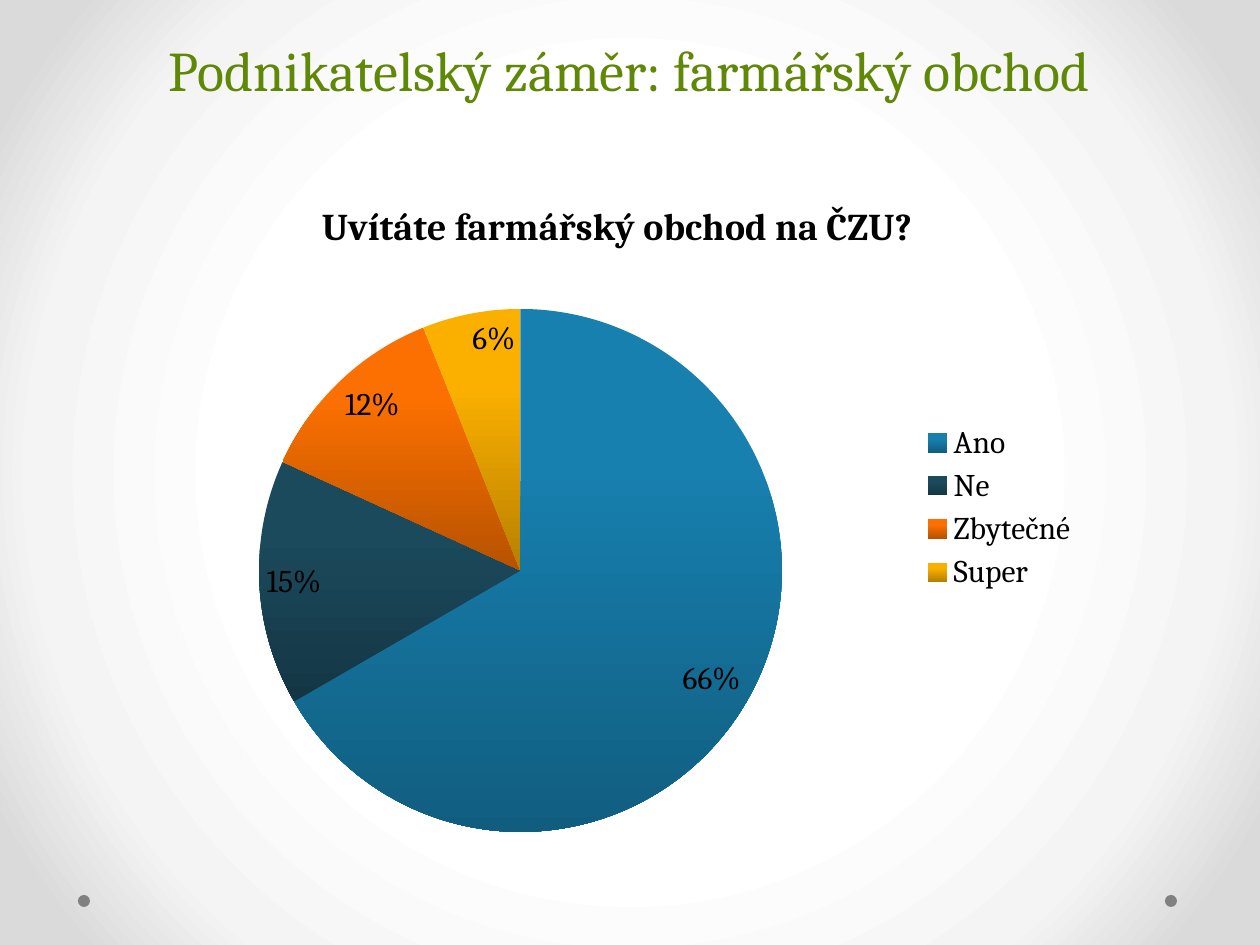
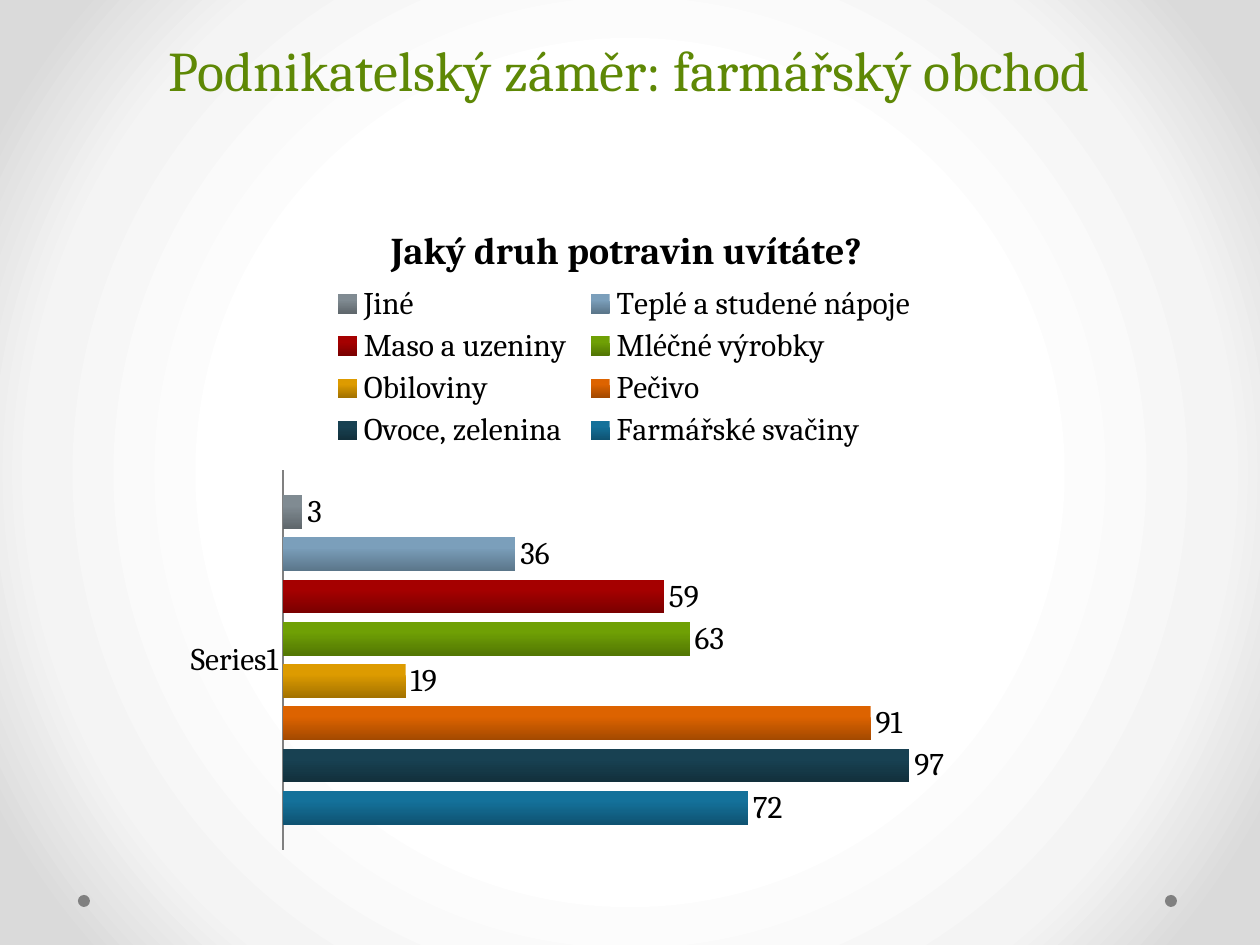
from dataclasses import dataclass

from lxml import etree
from pptx import Presentation
from pptx.chart.data import CategoryChartData as Data
from pptx.dml.color import RGBColor as Rgb
from pptx.enum.chart import XL_CHART_TYPE as Kind
from pptx.enum.chart import XL_LABEL_POSITION as Spot
from pptx.enum.chart import XL_LEGEND_POSITION as Side
from pptx.enum.chart import XL_TICK_MARK as Tick
from pptx.enum.shapes import MSO_SHAPE as Form
from pptx.enum.text import MSO_ANCHOR as Anchor
from pptx.enum.text import MSO_AUTO_SIZE as Fit
from pptx.enum.text import PP_ALIGN as Align
from pptx.oxml.ns import qn
from pptx.util import Pt


@dataclass(frozen=True)
class Theme:
    font: str = "Cambria"
    green: str = "5E8805"
    ink: str = "000000"
    gray: str = "808080"
    glow: tuple = ((50, "FFFFFF"), (76, "F4F4F4"), (92, "DADADA"))
    hues: tuple = ("1780AF", "1B4A5D", "FB7000", "FBB000",
                   "7EB606", "BC0000", "8CB5D5", "929EA6")
    head: float = 32
    lead: float = 58
    sub: float = 21.6
    base: float = 18


HEAD = "Podnikatelský záměr: farmářský obchod"
VIEWS = {"Ano": 66, "Ne": 15, "Zbytečné": 12, "Super": 6}
FOODS = {
    "Farmářské svačiny": 72,
    "Ovoce, zelenina": 97,
    "Pečivo": 91,
    "Obiloviny": 19,
    "Mléčné výrobky": 63,
    "Maso a uzeniny": 59,
    "Teplé a studené nápoje": 36,
    "Jiné": 3,
}


def px(n):
    return round(n * 914400 / 126)


def shade(hue, part):
    return Rgb(*(round(c * part) for c in Rgb.from_string(hue)))


def put(frame, text, size, color, bold=False, align=Align.CENTER, lead=None):
    para = frame.paragraphs[0]
    para.alignment = align
    if lead:
        para.line_spacing = Pt(lead)
    run = para.add_run()
    run.text = text
    font = run.font
    font.name, font.size, font.bold = Theme.font, Pt(size), bold
    font.color.rgb = Rgb.from_string(color)


def place(node, index, area, box):
    for old in node.findall(qn("c:layout")):
        node.remove(old)
    lay = etree.Element(qn("c:layout"))
    man = etree.SubElement(lay, qn("c:manualLayout"))
    parts = {"xMode": "edge", "yMode": "edge"}
    if node.tag == qn("c:plotArea"):
        parts = {"layoutTarget": "inner", **parts}
    left, top, wide, high = area
    fracs = ((box[0] - left) / wide, (box[1] - top) / high,
             *(a / b for a, b in zip(box[2:], (wide, high))))
    parts.update(zip("xywh", (f"{f:.4f}" for f in fracs)))
    for name, val in parts.items():
        etree.SubElement(man, qn(f"c:{name}"), val=val)
    node.insert(index, lay)


def blend(fill, hue, top, low):
    fill.gradient()
    fill.gradient_angle = 270
    for stop, pos, part in zip(fill.gradient_stops, (0.3, 1), (top, low)):
        stop.position = pos
        stop.color.rgb = shade(hue, part)


class Deck:
    def __init__(self, theme):
        self.theme = theme
        self.prs = Presentation()
        self.prs.slide_width, self.prs.slide_height = px(1260), px(945)
        self.slide = None
        self.glow()

    def glow(self):
        master = self.prs.slide_master
        master.background.fill.gradient()
        grad = master.element.find(".//" + qn("a:gradFill"))
        for kid in list(grad):
            grad.remove(kid)
        stops = etree.SubElement(grad, qn("a:gsLst"))
        for pos, hue in self.theme.glow:
            stop = etree.SubElement(stops, qn("a:gs"), pos=str(pos * 1000))
            etree.SubElement(stop, qn("a:srgbClr"), val=hue)
        path = etree.SubElement(grad, qn("a:path"), path="circle")
        etree.SubElement(path, qn("a:fillToRect"),
                         {side: "50000" for side in "ltrb"})

    def page(self, text):
        self.slide = self.prs.slides.add_slide(self.prs.slide_layouts[5])
        title = self.slide.shapes.title
        title.left, title.top, title.width, title.height = map(
            px, (63, -111, 1134, 220))
        frame = title.text_frame
        frame.auto_size = Fit.NONE
        frame.word_wrap = True
        frame.vertical_anchor = Anchor.BOTTOM
        put(frame, text, self.theme.head, self.theme.green,
            lead=self.theme.lead)

    def dot(self, left, top):
        dot = self.slide.shapes.add_shape(
            Form.OVAL, px(left), px(top), px(12), px(12))
        dot.shadow.inherit = False
        dot.fill.solid()
        dot.fill.fore_color.rgb = Rgb.from_string(self.theme.gray)
        dot.line.fill.background()
        self.prs.slide_master.shapes.element.append(dot.element)

    def chart(self, kind, data, area, text, head, plot, side):
        chart = self.slide.shapes.add_chart(
            kind, *map(px, area), data).chart
        chart.font.name, chart.font.size = self.theme.font, Pt(self.theme.base)
        chart.font.color.rgb = Rgb.from_string(self.theme.ink)
        chart.has_title = True
        title = chart.chart_title
        put(title.text_frame, text, self.theme.sub, self.theme.ink, bold=True)
        title.include_in_layout = False
        place(title.element if hasattr(title, "element")
              else chart.element.find(".//" + qn("c:title")), 1, area, head)
        place(chart.element.find(".//" + qn("c:plotArea")), 0, area, plot)
        chart.has_legend = True
        chart.legend.position = side
        chart.legend.include_in_layout = False
        return chart

    def labels(self, plot, form, spot):
        plot.has_data_labels = True
        marks = plot.data_labels
        marks.show_value = True
        marks.number_format, marks.number_format_is_linked = form, False
        marks.position = spot

    def pie(self, text, vals):
        data = Data()
        data.categories = list(vals)
        data.add_series(text, list(vals.values()))
        chart = self.chart(Kind.PIE, data, (130, 164, 961, 687), text,
                           (315, 195), (259, 309, 523, 523), Side.RIGHT)
        plot = chart.plots[0]
        plot.vary_by_categories = True
        self.labels(plot, '0"%"', Spot.INSIDE_END)
        for i, hue in enumerate(self.theme.hues[:len(vals)]):
            blend(plot.series[0].points[i].format.fill, hue, 1, 0.73)

    def bars(self, text, vals):
        data = Data()
        data.categories = ["Series1"]
        for name, val in vals.items():
            data.add_series(name, [val])
        area = (173, 193, 903, 670)
        chart = self.chart(Kind.BAR_CLUSTERED, data, area, text,
                           (384, 219), (283, 470, 775, 380), Side.TOP)
        legend = chart.element.find(".//" + qn("c:legend"))
        place(legend, 1, area, (324, 280, 600, 174))
        plot = chart.plots[0]
        plot.vary_by_categories = False
        plot.gap_width, plot.overlap = 150, -25
        self.labels(plot, "0", Spot.OUTSIDE_END)
        for row, hue in zip(plot.series, self.theme.hues):
            blend(row.format.fill, hue, 0.88, 0.65)
        axis = chart.value_axis
        axis.minimum_scale, axis.maximum_scale = 0, 120
        axis.has_major_gridlines = axis.visible = False
        axis = chart.category_axis
        axis.major_tick_mark = axis.minor_tick_mark = Tick.NONE
        axis.format.line.color.rgb = Rgb.from_string(self.theme.gray)


def main():
    deck = Deck(Theme())
    deck.page(HEAD)
    for left in (1165, 78):
        deck.dot(left, 895)
    deck.pie("Uvítáte farmářský obchod na ČZU?", VIEWS)
    deck.page(HEAD)
    deck.bars("Jaký druh potravin uvítáte?", FOODS)
    deck.prs.save("out.pptx")


if __name__ == "__main__":
    main()
